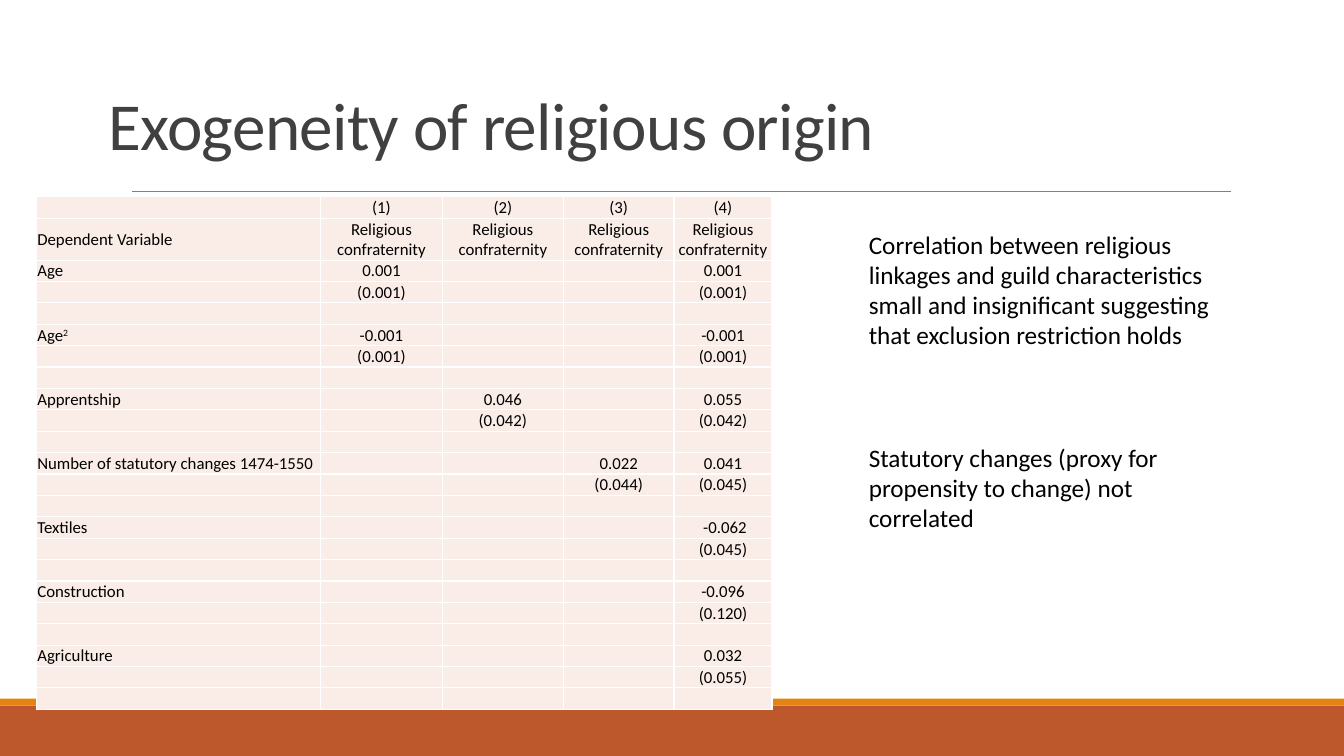
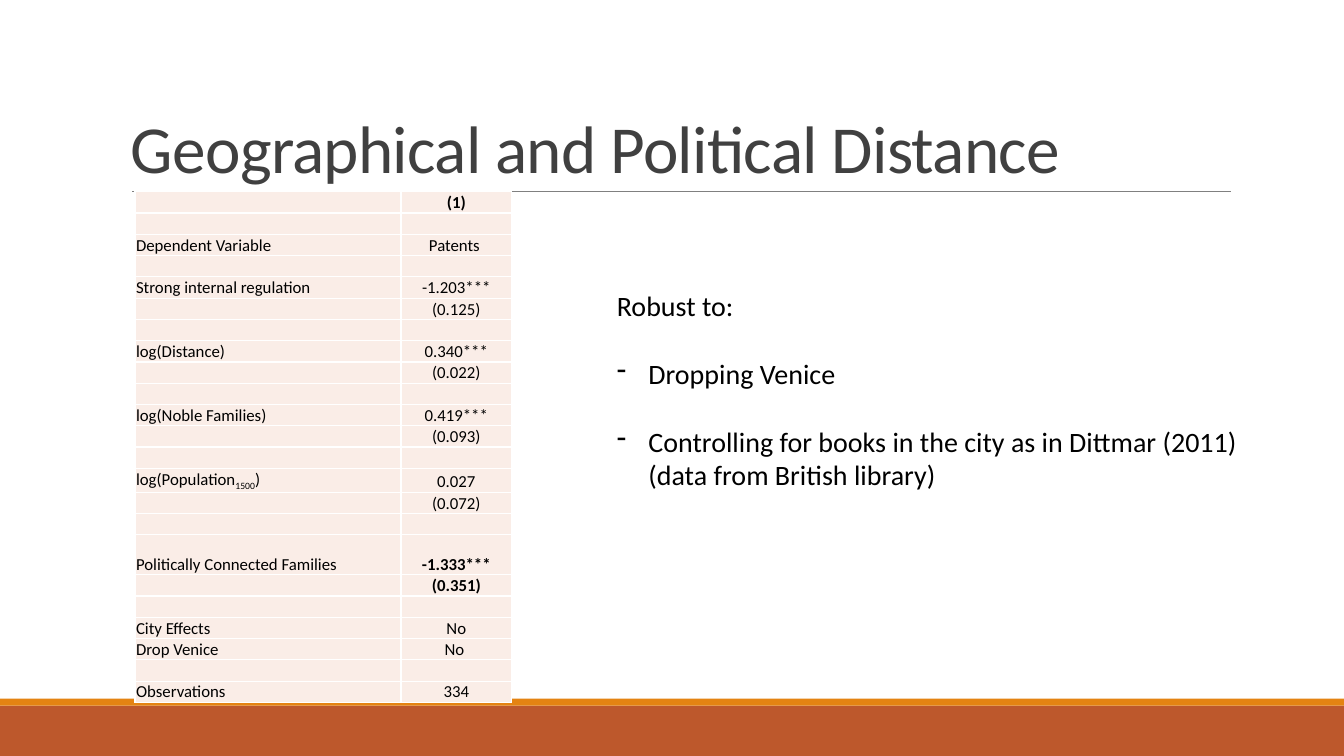
from dataclasses import dataclass

from lxml.etree import SubElement
from pptx import Presentation
from pptx.dml.color import RGBColor
from pptx.enum.shapes import MSO_CONNECTOR, MSO_SHAPE
from pptx.enum.text import MSO_ANCHOR, PP_ALIGN
from pptx.oxml.ns import qn
from pptx.util import Pt


@dataclass(frozen=True)
class Theme:
    font: str = "Calibri"
    ink: str = "000000"
    head: str = "404040"
    rule: str = "808080"
    band: str = "BD582C"
    edge: str = "E48312"
    cell: str = "FAEDE7"
    grid: str = "FFFFFF"
    big: float = 48
    list: float = 20
    note: float = 18
    small: float = 12


THEME = Theme()
WIDE, HIGH = 960, 540


# Content
def group(label, count, **pairs):
    """A value row, an error row and an empty row; pairs are keyed c1, c2, ..."""
    cols = [pairs.get(f"c{n + 1}", ("", "")) for n in range(count)]
    return [
        [label, *(value for value, _ in cols)],
        ["", *(error for _, error in cols)],
        [""] * (count + 1),
    ]


AGE = ("0.001", "(0.001)")
SQUARE = ("-0.001", "(0.001)")
DEP = "Dependent Variable"

ORIGIN = [
    ["", "(1)", "(2)", "(3)", "(4)"],
    [DEP] + ["Religious confraternity"] * 4,
    *group("Age", 4, c1=AGE, c4=AGE),
    *group([("Age", 0), ("2", 30)], 4, c1=SQUARE, c4=SQUARE),
    *group("Apprentship", 4, c2=("0.046", "(0.042)"), c4=("0.055", "(0.042)")),
    *group("Number of statutory changes 1474-1550", 4,
           c3=("0.022", "(0.044)"), c4=("0.041", "(0.045)")),
    *group("Textiles", 4, c4=(" -0.062", "(0.045)")),
    *group("Construction", 4, c4=("-0.096", "(0.120)")),
    *group("Agriculture", 4, c4=("0.032", "(0.055)")),
]

DISTANCE = [
    ["", "(1)"],
    ["", ""],
    [DEP, "Patents "],
    ["", ""],
    *group("Strong internal regulation", 1, c1=("-1.203***", "(0.125)")),
    *group("log(Distance)", 1, c1=("0.340***", "(0.022)")),
    *group("log(Noble Families)", 1, c1=("0.419***", "(0.093)")),
    *group([("log(Population", 0), ("1500", -25), (")", 0)], 1,
           c1=("0.027", "(0.072)")),
    *group("Politically Connected Families", 1, c1=("-1.333***", "(0.351)")),
    ["City Effects", "No"],
    ["Drop Venice", "No "],
    ["", ""],
    ["Observations", "334"],
]

SLIDES = [
    dict(
        title="Exogeneity of religious origin", spot=(70.5, 6.5),
        table=dict(rows=ORIGIN, at=(26, 140.5), cols=(203, 87, 86.5, 79, 70),
                   high=15.3, tall={1: 30}),
        box=(613.5, 160, 275, 225),
        text=["Correlation between religious linkages and guild characteristics "
              "small and insignificant suggesting that exclusion restriction holds",
              "Statutory changes (proxy for propensity to change) not correlated"],
        look=dict(size=THEME.note, gap=66),
    ),
    dict(
        title="Geographical and Political Distance", spot=(86.5, 22.5),
        table=dict(rows=DISTANCE, at=(96.5, 137), cols=(190, 79), high=15.2,
                   tall={13: 16.6, 16: 28.6}, bold={0, 16, 17}),
        box=(433.5, 202.5, 475, 152),
        text=["Robust to:", "Dropping Venice",
              "Controlling for books in the city as in Dittmar (2011) "
              "(data from British library)"],
        look=dict(size=THEME.list, gap=24.4, dash=True),
    ),
]


# Text
def color(code):
    return RGBColor.from_string(code)


def write(frame, paras, size, ink=THEME.ink, bold=False, align=PP_ALIGN.LEFT,
          gap=0, dash=False, lead=None, track=0):
    """Fill a text frame; a paragraph is a string or a list of (text, baseline)."""
    frame.word_wrap = True
    for n, para in enumerate(paras):
        p = frame.paragraphs[0] if n == 0 else frame.add_paragraph()
        p.alignment = align
        if lead:
            p.line_spacing = lead
        if n and gap:
            p.space_before = Pt(gap)
        if n and dash:
            props = p._p.get_or_add_pPr()
            props.set("marL", str(Pt(22.5)))
            props.set("indent", str(-Pt(22.5)))
            SubElement(props, qn("a:buChar")).set("char", "-")
        if not para:
            SubElement(p._p, qn("a:endParaRPr")).set("sz", str(int(size * 100)))
            continue
        for text, base in [(para, 0)] if isinstance(para, str) else para:
            run = p.add_run()
            run.text = text
            font = run.font
            font.name, font.size, font.bold = THEME.font, Pt(size), bold
            font.color.rgb = color(ink)
            if base:
                font._element.set("baseline", str(base * 1000))
            if track:
                font._element.set("spc", str(int(track * 100)))


def label(slide, box, paras, anchor=MSO_ANCHOR.TOP, **look):
    frame = slide.shapes.add_textbox(*map(Pt, box)).text_frame
    frame.vertical_anchor = anchor
    write(frame, paras, **look)


# Shared bands, rule and title
def base(slide, title, spot):
    for top, high, fill in ((504, 36, THEME.band), (499, 5, THEME.edge)):
        bar = slide.shapes.add_shape(
            MSO_SHAPE.RECTANGLE, 0, Pt(top), Pt(WIDE), Pt(high))
        bar.shadow.inherit = False
        bar.fill.solid()
        bar.fill.fore_color.rgb = color(fill)
        bar.line.fill.background()
    rule = slide.shapes.add_connector(
        MSO_CONNECTOR.STRAIGHT, Pt(94.5), Pt(136.8), Pt(879), Pt(136.8))
    rule.line.color.rgb = color(THEME.rule)
    rule.line.width = Pt(0.5)
    SubElement(rule._element.spPr, qn("a:effectLst"))
    label(slide, (*spot, 792, 114.5), [title], MSO_ANCHOR.BOTTOM,
          size=THEME.big, ink=THEME.head, lead=0.85, track=-0.5)


# Tables
def border(cell):
    props = cell._tc.get_or_add_tcPr()
    for n, side in enumerate(("lnL", "lnR", "lnT", "lnB")):
        line = SubElement(props, qn(f"a:{side}"), w=str(Pt(1)))
        fill = SubElement(line, qn("a:solidFill"))
        SubElement(fill, qn("a:srgbClr"), val=THEME.grid)
        props.remove(line)
        props.insert(n, line)


def grid(slide, rows, at, cols, high, tall, bold=()):
    highs = [tall.get(n, high) for n in range(len(rows))]
    table = slide.shapes.add_table(
        len(rows), len(cols), *map(Pt, (*at, sum(cols), sum(highs)))).table
    table.first_row = table.horz_banding = False
    for col, wide in zip(table.columns, cols):
        col.width = Pt(wide)
    for r, row in enumerate(rows):
        table.rows[r].height = Pt(highs[r])
        for c, text in enumerate(row):
            cell = table.cell(r, c)
            cell.fill.solid()
            cell.fill.fore_color.rgb = color(THEME.cell)
            cell.margin_left = cell.margin_right = cell.margin_top = Pt(0.7)
            cell.margin_bottom = 0
            cell.vertical_anchor = (
                MSO_ANCHOR.MIDDLE if text == DEP else MSO_ANCHOR.BOTTOM)
            write(cell.text_frame, [text], THEME.small,
                  bold=c > 0 and r in bold,
                  align=PP_ALIGN.CENTER if c else PP_ALIGN.LEFT)
            border(cell)


def main():
    deck = Presentation()
    deck.slide_width, deck.slide_height = Pt(WIDE), Pt(HIGH)
    for item in SLIDES:
        slide = deck.slides.add_slide(deck.slide_layouts[6])
        base(slide, item["title"], item["spot"])
        grid(slide, **item["table"])
        label(slide, item["box"], item["text"], **item["look"])
    deck.save("out.pptx")


if __name__ == "__main__":
    main()
